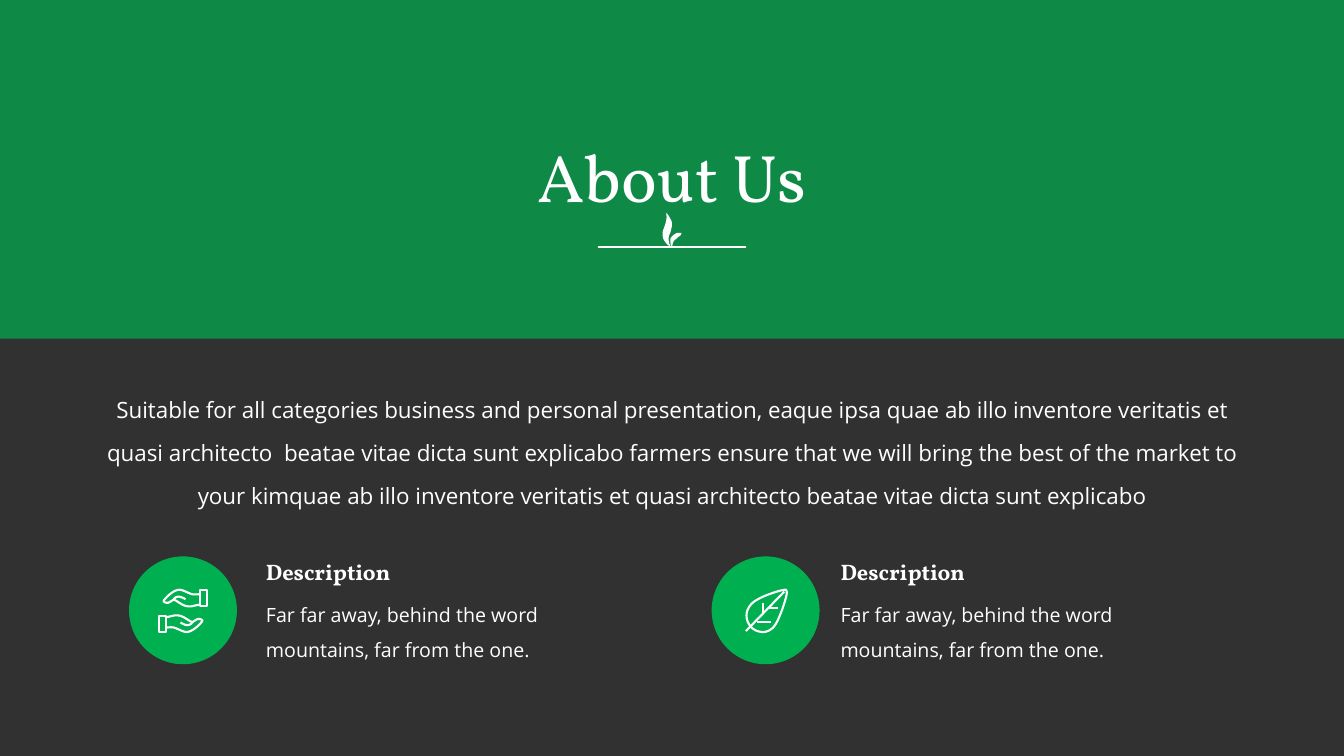
from dataclasses import dataclass

from lxml.etree import SubElement
from pptx import Presentation
from pptx.dml.color import RGBColor
from pptx.enum.shapes import MSO_CONNECTOR as Connector, MSO_SHAPE as Preset
from pptx.enum.text import MSO_ANCHOR as Anchor, MSO_AUTO_SIZE as AutoSize, PP_ALIGN as Align
from pptx.oxml.ns import qn
from pptx.util import Inches, Pt

PAGE_W, PAGE_H = Inches(13.333), Inches(7.5)
ICON_UNIT = PAGE_H / 750

WHITE, GREEN, DARK = "FFFFFF", "00B050", "313131"
SERIF, SANS = "Vollkorn", "Open Sans"

# A contour starts at a point; each further step is a line (x, y)
# or a cubic curve (x1, y1, x2, y2, x, y), in icon units.
Contour = list[tuple[float, ...]]


@dataclass(frozen=True)
class Area:
    """A place on the page, in percent of its width and height."""
    left: float
    top: float
    width: float = 0
    height: float = 0

    def emu(self) -> tuple[int, int, int, int]:
        return (round(self.left * PAGE_W / 100), round(self.top * PAGE_H / 100),
                round(self.width * PAGE_W / 100), round(self.height * PAGE_H / 100))


@dataclass(frozen=True)
class Feature:
    badge_left: float
    icon_left: float
    text_left: float
    icon: list[Contour]


# Icons
LEAF: list[Contour] = [
    [(41, 1), (37, 1, 14, 8, 7.5, 15), (1, 22, 1, 31, 7, 38), (10, 41, 14.5, 43, 19, 43),
     (23, 43, 26.5, 41, 29.5, 38), (35, 32, 43, 7, 42.5, 4), (42.5, 2, 42, 1, 41, 1)],
    [(2, 42), (40, 3)],
    [(19, 14), (19, 25)],
    [(25, 19), (34, 19)],
    [(13, 33), (27, 33)],
]
LOWER_HAND: list[Contour] = [
    [(1, 27), (8, 27), (8, 43), (1, 43), (1, 27)],
    [(8, 28), (12, 28, 15, 26, 19, 26.5), (22, 26.5, 25, 28, 28, 30), (30, 31, 32, 33, 34, 33),
     (36, 32, 38, 30, 40, 30), (42, 30, 45, 31, 43, 33), (40, 37, 33, 43, 28, 43),
     (25, 43, 20, 40, 15.5, 38.5), (13, 38, 10, 38.5, 8, 38.5)],
    [(34, 33), (32, 36, 29, 38, 22, 33.5)],
]
SPROUT: list[Contour] = [
    [(17, 20), (18, 20, 19, 20, 19, 20), (19, 22, 18, 23, 16, 24), (15, 25, 15, 25, 14, 26),
     (12, 27, 10, 29, 10, 34), (8, 32, 8, 30, 8, 26), (9, 24, 11, 22, 13, 21),
     (14, 20, 16, 20, 17, 20)],
    [(4, 0), (5, 1, 7, 4, 8, 6), (10, 9, 10, 12, 9, 16), (8, 20), (6, 23, 6, 27, 7, 31),
     (8, 32, 8, 33, 9, 34), (6, 33, 3, 30, 1, 26), (0, 22, 0, 20, 1, 17),
     (3, 12, 5, 6, 4, 2), (4, 0)],
]


def half_turn(contours: list[Contour], width: float, height: float) -> list[Contour]:
    return [[tuple((height if i % 2 else width) - value for i, value in enumerate(step))
             for step in contour] for contour in contours]


HANDS = LOWER_HAND + half_turn(LOWER_HAND, 49, 44)


def color(hex_code: str) -> RGBColor:
    return RGBColor.from_string(hex_code)


def flatten(contour: Contour, pieces: int = 8) -> list[tuple[float, float]]:
    points = [contour[0]]
    for step in contour[1:]:
        if len(step) == 2:
            points.append(step)
            continue
        corners = [points[-1], step[0:2], step[2:4], step[4:6]]
        for i in range(1, pieces + 1):
            t = i / pieces
            weights = ((1 - t) ** 3, 3 * t * (1 - t) ** 2, 3 * t ** 2 * (1 - t), t ** 3)
            points.append(tuple(sum(w * corner[axis] for w, corner in zip(weights, corners))
                                for axis in (0, 1)))
    return points


def add_icon(page, area: Area, contours: list[Contour], *, filled: bool = False) -> None:
    left, top, _, _ = area.emu()
    builder = None
    for contour in contours:
        points = [(left + x * ICON_UNIT, top + y * ICON_UNIT) for x, y in flatten(contour)]
        if builder is None:
            builder = page.shapes.build_freeform(*points[0])
        else:
            builder.move_to(*points[0])
        builder.add_line_segments(points[1:], close=contour[0] == contour[-1][-2:])
    icon = builder.convert_to_shape()
    icon.shadow.inherit = False
    if filled:
        icon.fill.solid()
        icon.fill.fore_color.rgb = color(WHITE)
        icon.line.fill.background()
    else:
        icon.fill.background()
        icon.line.color.rgb = color(WHITE)
        icon.line.width = Pt(1.5)


def add_block(page, area: Area, preset: Preset, *, alpha: int = 100) -> None:
    block = page.shapes.add_shape(preset, *area.emu())
    block.shadow.inherit = False
    block.fill.solid()
    block.fill.fore_color.rgb = color(GREEN)
    block.line.fill.background()
    if alpha < 100:
        fill_color = block._element.spPr.find(qn("a:solidFill"))[0]
        SubElement(fill_color, qn("a:alpha"), val=str(alpha * 1000))


def add_text(page, area: Area, text: str, *, size: float, font: str, bold: bool = False,
             align: Align = Align.LEFT, spacing: float = 1.0, grow: bool = False) -> None:
    box = page.shapes.add_textbox(*area.emu())
    frame = box.text_frame
    frame.word_wrap = True
    frame.vertical_anchor = Anchor.MIDDLE
    frame.auto_size = AutoSize.SHAPE_TO_FIT_TEXT if grow else AutoSize.NONE
    para = frame.paragraphs[0]
    para.alignment, para.line_spacing = align, spacing
    span = para.add_run()
    span.text = text
    span.font.size, span.font.name, span.font.bold = Pt(size), font, bold
    span.font.color.rgb = color(WHITE)


def add_rule(page, area: Area) -> None:
    left, top, width, _ = area.emu()
    rule = page.shapes.add_connector(Connector.STRAIGHT, left, top, left + width, top)
    rule.line.color.rgb = color(WHITE)
    rule.line.width = Pt(1.75)
    rule.line._ln.set("cap", "rnd")
    SubElement(rule._element.spPr, qn("a:effectLst"))


def add_feature(page, feature: Feature) -> None:
    add_block(page, Area(feature.badge_left, 73.6, 8.03, 14.27), Preset.OVAL)
    add_icon(page, Area(feature.icon_left, 77.87), feature.icon)
    add_text(page, Area(feature.text_left, 73.2, 16.65, 4.93), "Description",
             size=16, font=SERIF, bold=True, grow=True)
    add_text(page, Area(feature.text_left, 77.6, 29, 10.4),
             "Far far away, behind the word mountains, far from the one.",
             size=14, font=SANS, spacing=1.5, grow=True)


def main() -> None:
    deck = Presentation()
    deck.slide_width, deck.slide_height = PAGE_W, PAGE_H
    page = deck.slides.add_slide(deck.slide_layouts[6])
    page.background.fill.solid()
    page.background.fill.fore_color.rgb = color(DARK)

    # Title band
    add_block(page, Area(0, 0, 100, 44.8), Preset.RECTANGLE, alpha=70)
    add_text(page, Area(12.5, 17.2, 75, 13.33), "About Us",
             size=48, font=SERIF, align=Align.CENTER, spacing=0.9)
    add_icon(page, Area(49.28, 28.13), SPROUT, filled=True)
    add_rule(page, Area(44.55, 32.67, 10.9))

    # Introduction
    add_text(page, Area(6, 47.73, 88.05, 22.13),
             "Suitable for all categories business and personal presentation, eaque ipsa quae ab "
             "illo inventore veritatis et quasi architecto  beatae vitae dicta sunt explicabo "
             "farmers ensure that we will bring the best of the market to your kimquae ab illo "
             "inventore veritatis et quasi architecto beatae vitae dicta sunt explicabo",
             size=16, font=SANS, align=Align.CENTER, spacing=1.6)

    # Features
    for feature in (Feature(9.6, 11.78, 19.05, HANDS), Feature(52.95, 55.35, 61.8, LEAF)):
        add_feature(page, feature)

    deck.save("out.pptx")


if __name__ == "__main__":
    main()
